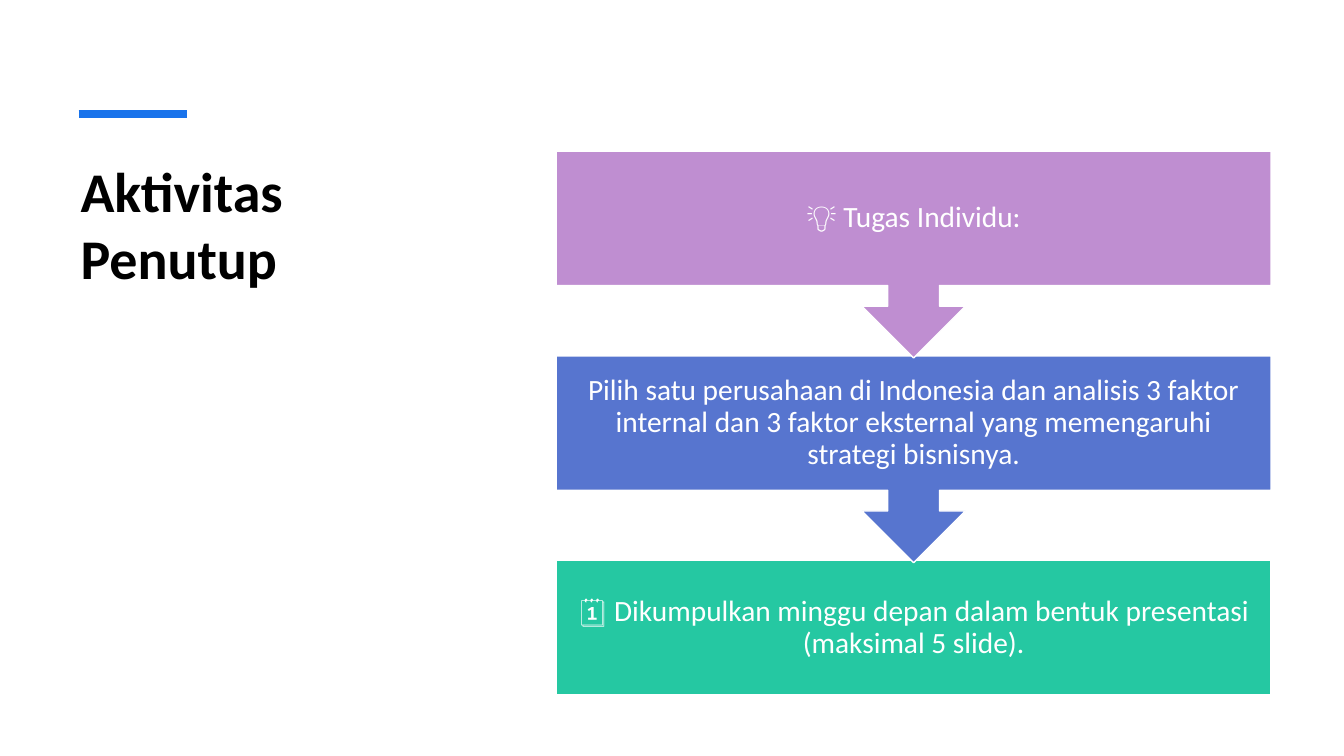
"""Builds the closing activity slide: a title and a three-step task flow."""
from lxml import etree
from pptx import Presentation
from pptx.dml.color import RGBColor
from pptx.enum.shapes import MSO_CONNECTOR, MSO_SHAPE
from pptx.enum.text import MSO_ANCHOR, PP_ALIGN
from pptx.oxml.ns import qn
from pptx.util import Cm, Pt

STRAIGHT = MSO_CONNECTOR.STRAIGHT
RECTANGLE, CALLOUT = MSO_SHAPE.RECTANGLE, MSO_SHAPE.DOWN_ARROW_CALLOUT
TOP, MIDDLE = MSO_ANCHOR.TOP, MSO_ANCHOR.MIDDLE
LEFT, CENTER = PP_ALIGN.LEFT, PP_ALIGN.CENTER

COLORS = {
    "white": "FFFFFF",
    "title": "000000",
    "accent": "1973EB",
    "task": "BF8ED1",
    "analysis": "5775CF",
    "deadline": "25C8A2",
}
TITLE_FORMAT = {
    "frame": {"word_wrap": True, "vertical_anchor": TOP},
    "paragraph": {"alignment": LEFT},
    "font": {"name": "Calibri", "size": Pt(40), "bold": True},
}
STEP_FORMAT = {
    "frame": {
        "word_wrap": True, "vertical_anchor": MIDDLE,
        "margin_left": Cm(0.41), "margin_right": Cm(0.41),
        "margin_top": Cm(0.41), "margin_bottom": Cm(0.41),
    },
    "paragraph": {"alignment": CENTER, "line_spacing": 0.9},
    "font": {"name": "Calibri", "size": Pt(21), "bold": False},
}
STEPS = [
    ("task", "💡 Tugas Individu:"),
    ("analysis", "Pilih satu perusahaan di Indonesia dan analisis 3 faktor internal "
                 "dan 3 faktor eksternal yang memengaruhi strategi bisnisnya."),
    ("deadline", "🗓️ Dikumpulkan minggu depan dalam bentuk presentasi (maksimal 5 slide)."),
]


def color(name):
    """Return the named colour."""
    return RGBColor.from_string(COLORS[name])


def write(frame, text, formats, color_name):
    """Fill a text frame with one formatted paragraph."""
    paragraph = frame.paragraphs[0]
    paragraph.text = text
    font = paragraph.runs[0].font
    targets = {"frame": frame, "paragraph": paragraph, "font": font}
    for part, values in formats.items():
        for attribute, value in values.items():
            setattr(targets[part], attribute, value)
    font.color.rgb = color(color_name)


def add_heading(slide, left, top, width, height):
    """Place the accent line and the title below it."""
    line_left, line_top = left + Cm(0.2), top - Cm(0.94)
    accent = slide.shapes.add_connector(
        STRAIGHT, line_left, line_top, line_left + Cm(2.72), line_top)
    accent.line.color.rgb = color("accent")
    accent.line.width = Pt(6)
    etree.SubElement(accent._element.spPr, qn("a:effectLst"))
    title = slide.shapes.add_textbox(left, top, width, height)
    write(title.text_frame, "Aktivitas Penutup", TITLE_FORMAT, "title")


def add_flow(slide, left, top, width, height):
    """Stack the steps from the last to the first, so arrows overlap the next step."""
    last = len(STEPS) - 1
    last_height = Cm(3.38)
    pitch = (height - last_height) // last
    for index, (color_name, text) in reversed(list(enumerate(STEPS))):
        preset, step_height = (
            (RECTANGLE, last_height) if index == last else (CALLOUT, pitch + Cm(0.05)))
        step = slide.shapes.add_shape(preset, left, top + index * pitch, width, step_height)
        step.shadow.inherit = False
        step.fill.solid()
        step.fill.fore_color.rgb = color(color_name)
        step.line.color.rgb = color("white")
        step.line.width = Pt(1)
        write(step.text_frame, text, STEP_FORMAT, "white")


def main():
    """Build and save the slide."""
    deck = Presentation()
    deck.slide_width, deck.slide_height = Cm(33.87), Cm(19.05)
    slide = deck.slides.add_slide(deck.slide_layouts[6])
    add_heading(slide, Cm(1.78), Cm(3.81), Cm(10.21), Cm(10.9))
    add_flow(slide, Cm(14.02), Cm(3.81), Cm(18.01), Cm(13.7))
    deck.save("out.pptx")


if __name__ == "__main__":
    main()
